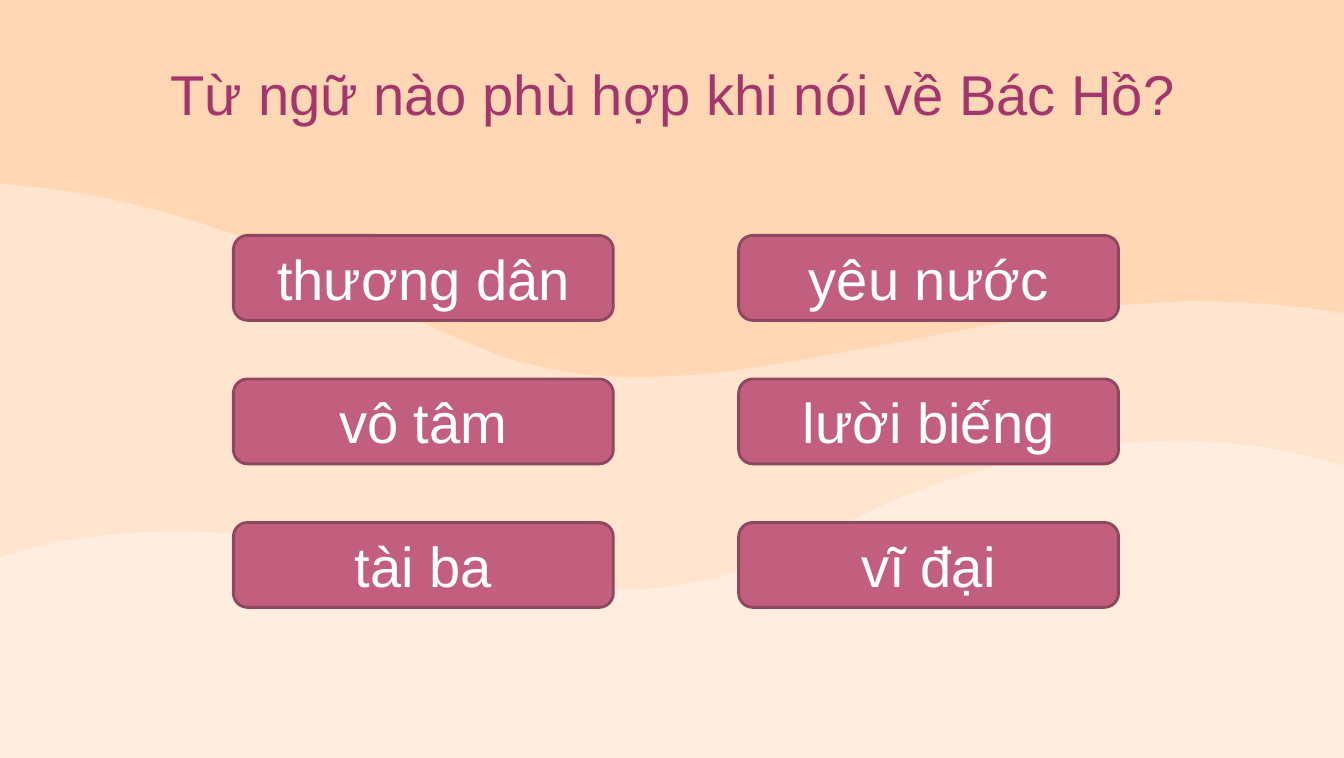
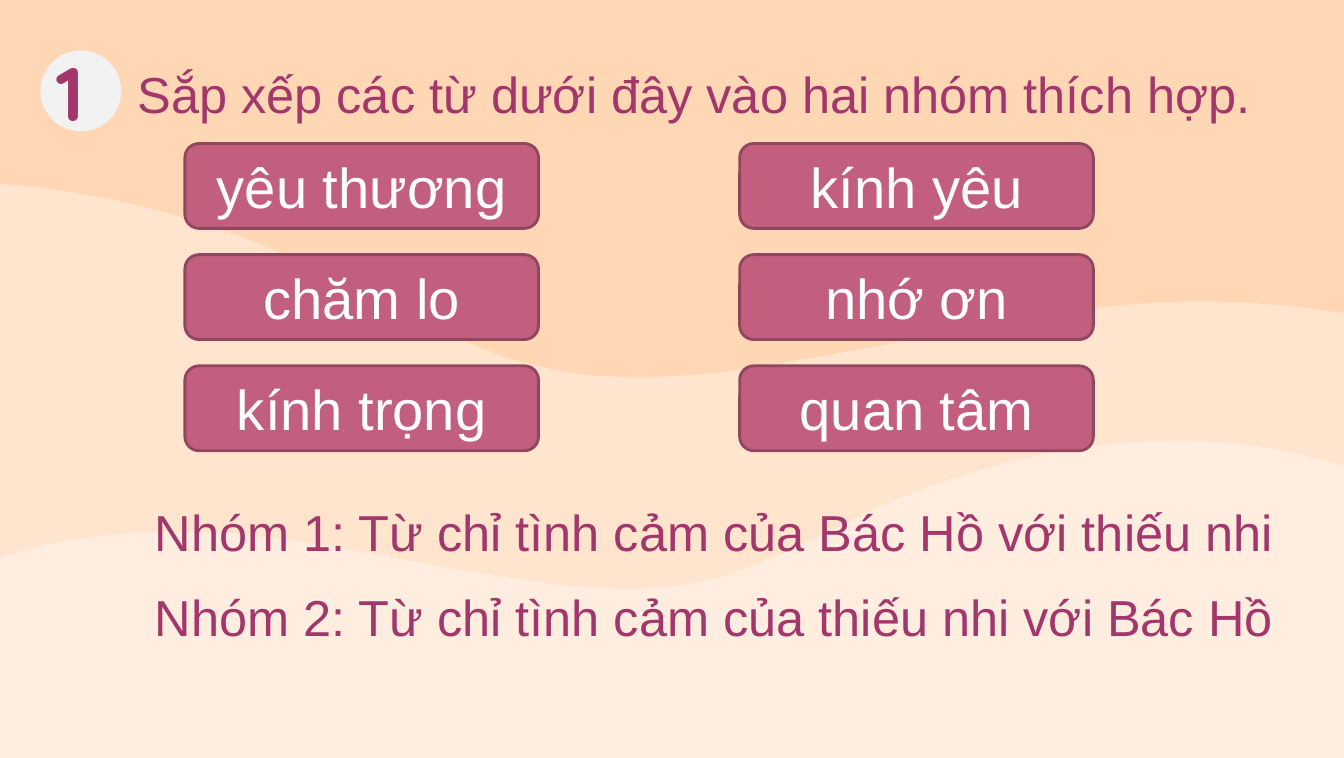
from pptx import Presentation
from pptx.dml.color import RGBColor
from pptx.enum.shapes import MSO_SHAPE as Preset
from pptx.enum.text import MSO_ANCHOR as Anchor, PP_ALIGN as Align
from pptx.oxml.ns import qn
from pptx.util import Inches, Pt
from lxml.etree import SubElement

PEACH = RGBColor(0xFF, 0xD7, 0xB5)
WHITE = RGBColor(0xFF, 0xFF, 0xFF)
PALE_GREY = RGBColor(0xF2, 0xF2, 0xF2)
PLUM = RGBColor(0xA3, 0x37, 0x6C)
ROSE = RGBColor(0xC2, 0x5F, 0x7F)
DARK_ROSE = RGBColor(0x90, 0x46, 0x5E)

WIDTH, HEIGHT = 13.3, 7.5
ROW_HEIGHT = 0.84
WAVE_OPACITY = 35
CURVE_STEPS = 12

WAVES = [
    ((0, 1.82), [
        ((0.75, 1.87), (1.49, 2.03), (2.2, 2.28)),
        ((2.45, 2.36), (2.69, 2.46), (2.92, 2.56)),
        ((3.15, 2.67), (3.36, 2.77), (3.6, 2.9)),
        ((4.04, 3.13), (4.5, 3.35), (4.98, 3.53)),
        ((5.24, 3.61), (5.51, 3.67), (5.8, 3.71)),
        ((5.96, 3.72), (6.13, 3.73), (6.29, 3.73)),
        ((6.52, 3.73), (6.75, 3.72), (6.98, 3.7)),
        ((7.36, 3.66), (7.75, 3.59), (8.15, 3.52)),
        ((8.55, 3.45), (8.95, 3.38), (9.34, 3.3)),
        ((9.84, 3.21), (10.37, 3.1), (10.89, 3.04)),
        ((11.19, 3.01), (11.49, 2.99), (11.79, 2.98)),
        ((12.0, 2.98), (12.21, 2.99), (12.42, 3.0)),
        ((12.72, 3.02), (13.01, 3.05), (13.3, 3.1)),
    ]),
    ((0, 5.52), [
        ((0.14, 5.47), (0.29, 5.43), (0.44, 5.39)),
        ((0.74, 5.33), (1.05, 5.29), (1.36, 5.27)),
        ((1.5, 5.26), (1.68, 5.26), (1.86, 5.26)),
        ((2.1, 5.26), (2.34, 5.28), (2.57, 5.31)),
        ((2.98, 5.35), (3.4, 5.43), (3.8, 5.5)),
        ((4.11, 5.56), (4.43, 5.62), (4.75, 5.67)),
        ((5.07, 5.72), (5.36, 5.77), (5.65, 5.8)),
        ((5.85, 5.81), (6.03, 5.83), (6.21, 5.83)),
        ((6.34, 5.83), (6.47, 5.82), (6.6, 5.81)),
        ((6.82, 5.78), (7.04, 5.74), (7.25, 5.67)),
        ((7.61, 5.54), (7.96, 5.39), (8.3, 5.22)),
        ((8.5, 5.11), (8.69, 5.02), (8.87, 4.94)),
        ((9.06, 4.87), (9.25, 4.79), (9.45, 4.73)),
        ((10.13, 4.5), (10.88, 4.37), (11.63, 4.36)),
        ((11.73, 4.36), (11.83, 4.36), (11.93, 4.37)),
        ((12.39, 4.39), (12.83, 4.47), (13.3, 4.61)),
    ]),
]

TITLE_FONT = {"name": "Arial", "size": Pt(40)}
TASK_FONT = {"name": "Arial", "size": Pt(36)}
NUMBER_FONT = {"name": "Quicksand", "size": Pt(54), "bold": True}

SLIDES = [
    {
        "texts": [("Từ ngữ nào phù hợp khi nói về Bác Hồ?",
                   (1.05, 0.5, 11.21, ROW_HEIGHT), TITLE_FONT, Align.CENTER)],
        "words": [("thương dân", "yêu nước"),
                  ("vô tâm", "lười biếng"),
                  ("tài ba", "vĩ đại")],
        "grid": {"left": 2.31, "top": 2.33, "pitch": (5, 1.42), "width": 3.76},
    },
    {
        "badge": (0.4, 0.5, 0.8, 0.8),
        "texts": [
            ("1", (0.43, 0.64, 0.8, 0.52), NUMBER_FONT, Align.JUSTIFY),
            ("Sắp xếp các từ dưới đây vào hai nhóm thích hợp.",
             (1.23, 0.5, 12, ROW_HEIGHT), TASK_FONT, Align.JUSTIFY),
            ("Nhóm 1: Từ chỉ tình cảm của Bác Hồ với thiếu nhi",
             (1.4, 4.84, 11.8, ROW_HEIGHT), TASK_FONT, Align.JUSTIFY),
            ("Nhóm 2: Từ chỉ tình cảm của thiếu nhi với Bác Hồ",
             (1.4, 5.68, 11.8, ROW_HEIGHT), TASK_FONT, Align.JUSTIFY),
        ],
        "words": [("yêu thương", "kính yêu"),
                  ("chăm lo", "nhớ ơn"),
                  ("kính trọng", "quan tâm")],
        "grid": {"left": 1.83, "top": 1.42, "pitch": (5.49, 1.1), "width": 3.5},
    },
]


def curve_points(start, segments):
    points = [start]
    for segment in segments:
        corners = (points[-1], *segment)
        for step in range(1, CURVE_STEPS + 1):
            t = step / CURVE_STEPS
            weights = ((1 - t) ** 3, 3 * t * (1 - t) ** 2, 3 * t * t * (1 - t), t ** 3)
            points.append(tuple(sum(w * c[axis] for w, c in zip(weights, corners))
                                for axis in (0, 1)))
    return points


def paint(shape, fill, line=None):
    shape.shadow.inherit = False
    shape.fill.solid()
    shape.fill.fore_color.rgb = fill
    if line is None:
        shape.line.fill.background()
    else:
        shape.line.color.rgb = line
        shape.line.width = Pt(2)


def write(shape, text, font, color, align):
    frame = shape.text_frame
    frame.word_wrap = True
    frame.vertical_anchor = Anchor.MIDDLE
    paragraph = frame.paragraphs[0]
    paragraph.alignment = align
    run = paragraph.add_run()
    run.text = text
    for attribute, value in font.items():
        setattr(run.font, attribute, value)
    run.font.color.rgb = color


def add_wave(slide, start, segments):
    outline = [*curve_points(start, segments), (WIDTH, HEIGHT), (0, HEIGHT)]
    points = [(Inches(x), Inches(y)) for x, y in outline]
    builder = slide.shapes.build_freeform(*points[0])
    builder.add_line_segments(points[1:], close=True)
    wave = builder.convert_to_shape()
    paint(wave, WHITE)
    tint = wave.fill._xPr.find(qn("a:solidFill"))[0]
    SubElement(tint, qn("a:alpha"), val=str(WAVE_OPACITY * 1000))


def add_label(slide, text, box, font, align):
    label = slide.shapes.add_textbox(*map(Inches, box))
    for side in ("left", "top", "right", "bottom"):
        setattr(label.text_frame, f"margin_{side}", Inches(0.13))
    write(label, text, font, PLUM, align)


def add_words(slide, words, left, top, pitch, width):
    for row, pair in enumerate(words):
        for column, word in enumerate(pair):
            box = (left + column * pitch[0], top + row * pitch[1], width, ROW_HEIGHT)
            button = slide.shapes.add_shape(Preset.ROUNDED_RECTANGLE, *map(Inches, box))
            paint(button, ROSE, DARK_ROSE)
            write(button, word, TITLE_FONT, WHITE, Align.CENTER)


def main():
    deck = Presentation()
    deck.slide_width, deck.slide_height = Inches(WIDTH), Inches(HEIGHT)
    backdrop = deck.slide_master.background.fill
    backdrop.solid()
    backdrop.fore_color.rgb = PEACH
    for content in SLIDES:
        slide = deck.slides.add_slide(deck.slide_layouts[6])
        for wave in WAVES:
            add_wave(slide, *wave)
        if "badge" in content:
            badge = slide.shapes.add_shape(Preset.OVAL, *map(Inches, content["badge"]))
            paint(badge, PALE_GREY)
        for label in content["texts"]:
            add_label(slide, *label)
        add_words(slide, content["words"], **content["grid"])
    deck.save("out.pptx")


if __name__ == "__main__":
    main()
